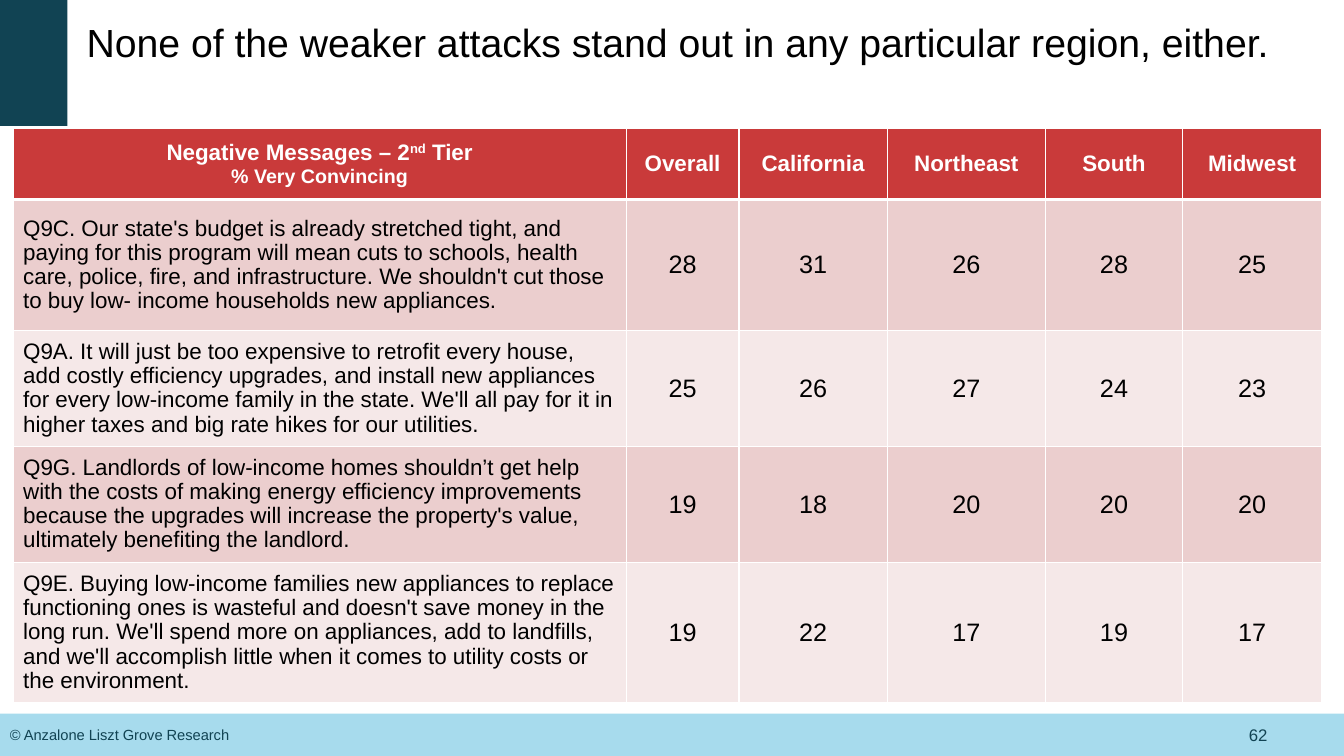
from lxml import etree
from pptx import Presentation
from pptx.dml.color import RGBColor
from pptx.enum.shapes import MSO_SHAPE as Shape
from pptx.enum.text import MSO_ANCHOR as Anchor, PP_ALIGN as Align
from pptx.oxml.ns import qn
from pptx.util import Inches, Pt

TITLE = "None of the weaker attacks stand out in any particular region, either."
COPYRIGHT = "© Anzalone Liszt Grove Research"
PAGE = "62"
REGIONS = ["Overall", "California", "Northeast", "South", "Midwest"]
# Pieces of the first heading: text and what differs from the heading format
MESSAGE_HEADING = [
    ("Negative Messages – 2", {}),
    ("nd", {"superscript": True}),
    (" Tier\n", {}),
    ("% Very Convincing", {"size": 14}),
]
MESSAGES = [
    ("Q9C. Our state's budget is already stretched tight, and paying for this "
     "program will mean cuts to schools, health care, police, fire, and "
     "infrastructure. We shouldn't cut those to buy low- income households "
     "new appliances.", [28, 31, 26, 28, 25]),
    ("Q9A. It will just be too expensive to retrofit every house, add costly "
     "efficiency upgrades, and install new appliances for every low-income "
     "family in the state. We'll all pay for it in higher taxes and big rate "
     "hikes for our utilities.", [25, 26, 27, 24, 23]),
    ("Q9G. Landlords of low-income homes shouldn’t get help with the costs of "
     "making energy efficiency improvements because the upgrades will increase "
     "the property's value, ultimately benefiting the landlord.",
     [19, 18, 20, 20, 20]),
    ("Q9E. Buying low-income families new appliances to replace functioning "
     "ones is wasteful and doesn't save money in the long run. We'll spend more "
     "on appliances, add to landfills, and we'll accomplish little when it "
     "comes to utility costs or the environment.", [19, 22, 17, 19, 17]),
]
COLUMN_WIDTHS = [6.08, 1.12, 1.47, 1.57, 1.36, 1.38]
ROW_HEIGHTS = [0.71, 1.3, 1.15, 1.15, 1.33]

NAVY, SKY, RED = "114353", "A7DBED", "C93A3A"
BANDS = ["EBCECE", "F5E8E8"]
WHITE, BLACK = "FFFFFF", "000000"


def color(hex_code):
    return RGBColor.from_string(hex_code)


def write(frame, text, size=16, ink=BLACK, bold=False, align=Align.LEFT, spacing=None):
    """Fill a text frame with a string or with (text, changes) pieces."""
    frame.word_wrap = True
    paragraph = frame.paragraphs[0]
    paragraph.alignment = align
    if spacing:
        paragraph.line_spacing = spacing
    pieces = [(text, {})] if isinstance(text, str) else text
    for words, changes in pieces:
        run = paragraph.add_run()
        run.text = words.rstrip("\n")
        run.font.name = "Arial"
        run.font.size = Pt(changes.get("size", size))
        run.font.bold = bold
        run.font.color.rgb = color(ink)
        if changes.get("superscript"):
            run.font._element.set("baseline", "30000")
        if words.endswith("\n"):
            paragraph.add_line_break()


def add_text(left, top, width, height, text, **look):
    frame = slide.shapes.add_textbox(
        Inches(left), Inches(top), Inches(width), Inches(height)).text_frame
    frame.vertical_anchor = Anchor.MIDDLE
    write(frame, text, **look)


def add_block(left, top, width, height, fill):
    block = slide.shapes.add_shape(
        Shape.RECTANGLE, Inches(left), Inches(top), Inches(width), Inches(height))
    block.shadow.inherit = False
    block.fill.solid()
    block.fill.fore_color.rgb = color(fill)
    block.line.fill.background()


def set_cell(cell, text, fill, top_line=1, bottom_line=1, **look):
    cell.vertical_anchor = Anchor.MIDDLE
    write(cell.text_frame, text, **look)
    properties = cell._tc.get_or_add_tcPr()
    for side, points in (("L", 1), ("R", 1), ("T", top_line), ("B", bottom_line)):
        border = etree.SubElement(properties, qn(f"a:ln{side}"), w=str(Pt(points)))
        solid = etree.SubElement(border, qn("a:solidFill"))
        etree.SubElement(solid, qn("a:srgbClr"), val=WHITE)
    cell.fill.solid()
    cell.fill.fore_color.rgb = color(fill)


deck = Presentation()
deck.slide_width, deck.slide_height = Inches(13.33), Inches(7.5)
slide = deck.slides.add_slide(deck.slide_layouts[6])

add_block(0, 7.08, 13.33, 0.42, SKY)
add_block(0, 0, 0.67, 1.25, NAVY)
add_text(0.76, 0, 12.19, 0.82, TITLE, size=28)
add_text(9.56, 7.09, 3.11, 0.4, PAGE, size=12, ink=NAVY, align=Align.RIGHT)
add_text(0, 7.09, 6.44, 0.4, COPYRIGHT, size=10.5, ink=NAVY)

table = slide.shapes.add_table(
    len(ROW_HEIGHTS), len(COLUMN_WIDTHS), Inches(0.13), Inches(1.27),
    Inches(sum(COLUMN_WIDTHS)), Inches(sum(ROW_HEIGHTS))).table
for column, width in zip(table.columns, COLUMN_WIDTHS):
    column.width = Inches(width)
for row, height in zip(table.rows, ROW_HEIGHTS):
    row.height = Inches(height)

for c, heading in enumerate([MESSAGE_HEADING] + REGIONS):
    set_cell(table.cell(0, c), heading, RED, bottom_line=3,
             ink=WHITE, bold=True, align=Align.CENTER)
for r, (message, shares) in enumerate(MESSAGES, start=1):
    band = BANDS[(r - 1) % 2]
    top_line = 3 if r == 1 else 1
    set_cell(table.cell(r, 0), message, band, top_line, spacing=0.97)
    for c, share in enumerate(shares, start=1):
        set_cell(table.cell(r, c), str(share), band, top_line,
                 size=18, align=Align.CENTER)

deck.save("out.pptx")
